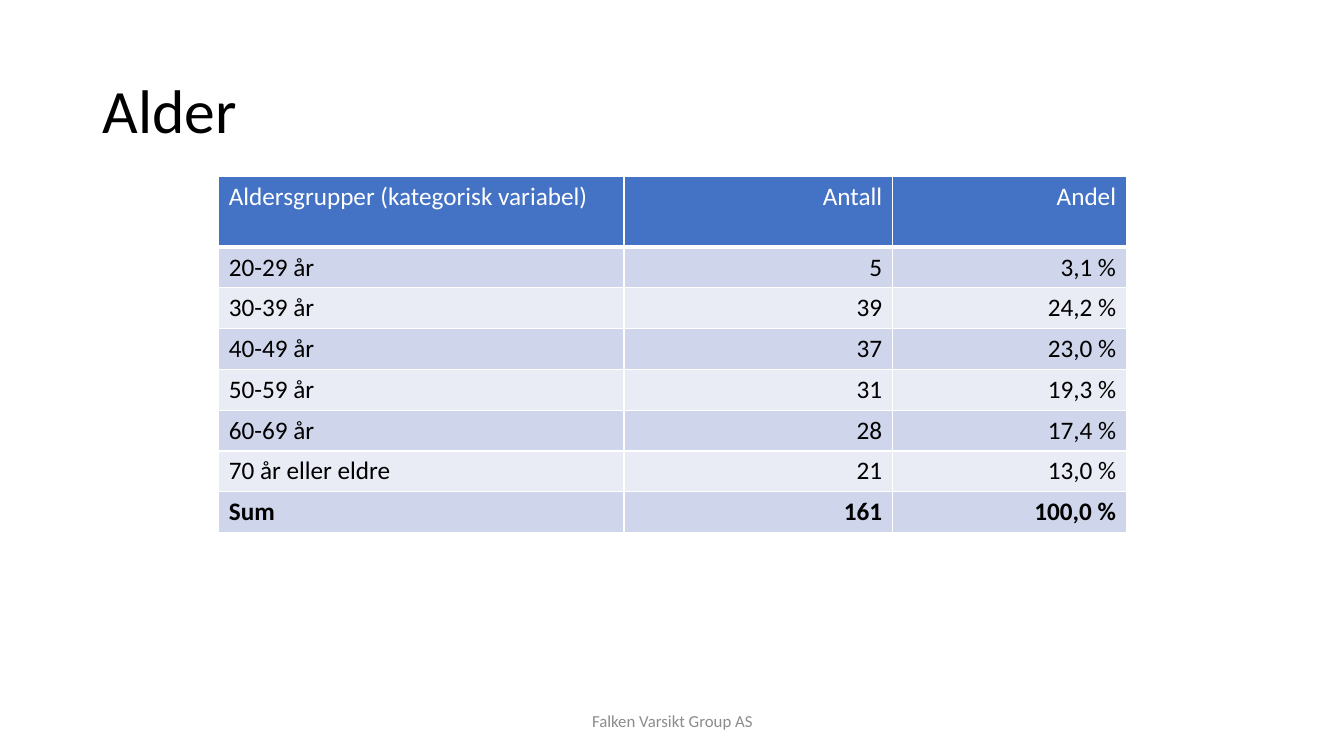
"""Build a slide with a table of age groups."""
from lxml import etree
from pptx import Presentation
from pptx.dml.color import RGBColor
from pptx.enum import text
from pptx.oxml import ns
from pptx.util import Inches, Pt

COLORS = {"header": "4472C4", "odd": "CFD5EA", "even": "E9EBF5",
          "white": "FFFFFF", "black": "000000", "gray": "8C8C8C"}
ALIGN = text.PP_ALIGN
COLUMNS = [4.02, 2.66, 2.32]
HEADER_HEIGHT, ROW_HEIGHT = 0.7, 0.405
ROWS = [
    ("Aldersgrupper (kategorisk variabel)", "Antall", "Andel"),
    ("20-29 år", "5", "3,1 %"),
    ("30-39 år", "39", "24,2 %"),
    ("40-49 år", "37", "23,0 %"),
    ("50-59 år", "31", "19,3 %"),
    ("60-69 år", "28", "17,4 %"),
    ("70 år eller eldre", "21", "13,0 %"),
    ("Sum", "161", "100,0 %"),
]


def write(tf, content, size, color, align=ALIGN.LEFT, bold=False, spacing=None):
    p = tf.paragraphs[0]
    p.alignment = align
    if spacing:
        p.line_spacing = spacing
    r = p.add_run()
    r.text = content
    font = {"name": "Calibri", "size": Pt(size), "bold": bold}
    for key, value in font.items():
        setattr(r.font, key, value)
    r.font.color.rgb = RGBColor.from_string(COLORS[color])


def add_text(s, box, content, size, color, **options):
    tf = s.shapes.add_textbox(*map(Inches, box)).text_frame
    settings = {"word_wrap": True, "vertical_anchor": text.MSO_ANCHOR.MIDDLE}
    for key, value in settings.items():
        setattr(tf, key, value)
    write(tf, content, size, color, **options)


def add_borders(cell, bottom):
    widths = {"lnL": 1, "lnR": 1, "lnT": 1, "lnB": bottom}
    for side, width in widths.items():
        line = etree.SubElement(cell._tc.get_or_add_tcPr(), ns.qn(f"a:{side}"), w=str(Pt(width)))
        fill = etree.SubElement(line, ns.qn("a:solidFill"))
        etree.SubElement(fill, ns.qn("a:srgbClr"), val=COLORS["white"])


def add_age_table(s, left, top):
    height = HEADER_HEIGHT + ROW_HEIGHT * (len(ROWS) - 1)
    box = map(Inches, (left, top, sum(COLUMNS), height))
    table = s.shapes.add_table(len(ROWS), len(COLUMNS), *box).table
    for column, width in zip(table.columns, COLUMNS):
        column.width = Inches(width)
    for i, values in enumerate(ROWS):
        header = i == 0
        table.rows[i].height = Inches(HEADER_HEIGHT if header else ROW_HEIGHT)
        fill = "header" if header else "odd" if i % 2 else "even"
        for j, value in enumerate(values):
            cell = table.cell(i, j)
            add_borders(cell, 3 if header else 1)
            cell.fill.solid()
            cell.fill.fore_color.rgb = RGBColor.from_string(COLORS[fill])
            write(cell.text_frame, value, 18, "white" if header else "black",
                  align=ALIGN.RIGHT if j else ALIGN.LEFT, bold=i == len(ROWS) - 1)


def main():
    prs = Presentation()
    prs.slide_width, prs.slide_height = Inches(13.33), Inches(7.5)
    s = prs.slides.add_slide(prs.slide_layouts[6])
    add_text(s, (0.92, 0.4, 11.5, 1.45), "Alder", 44, "black", spacing=0.9)
    add_age_table(s, 2.17, 1.75)
    add_text(s, (4.42, 6.95, 4.5, 0.4), "Falken Varsikt Group AS", 12, "gray", align=ALIGN.CENTER)
    prs.save("out.pptx")


if __name__ == "__main__":
    main()
